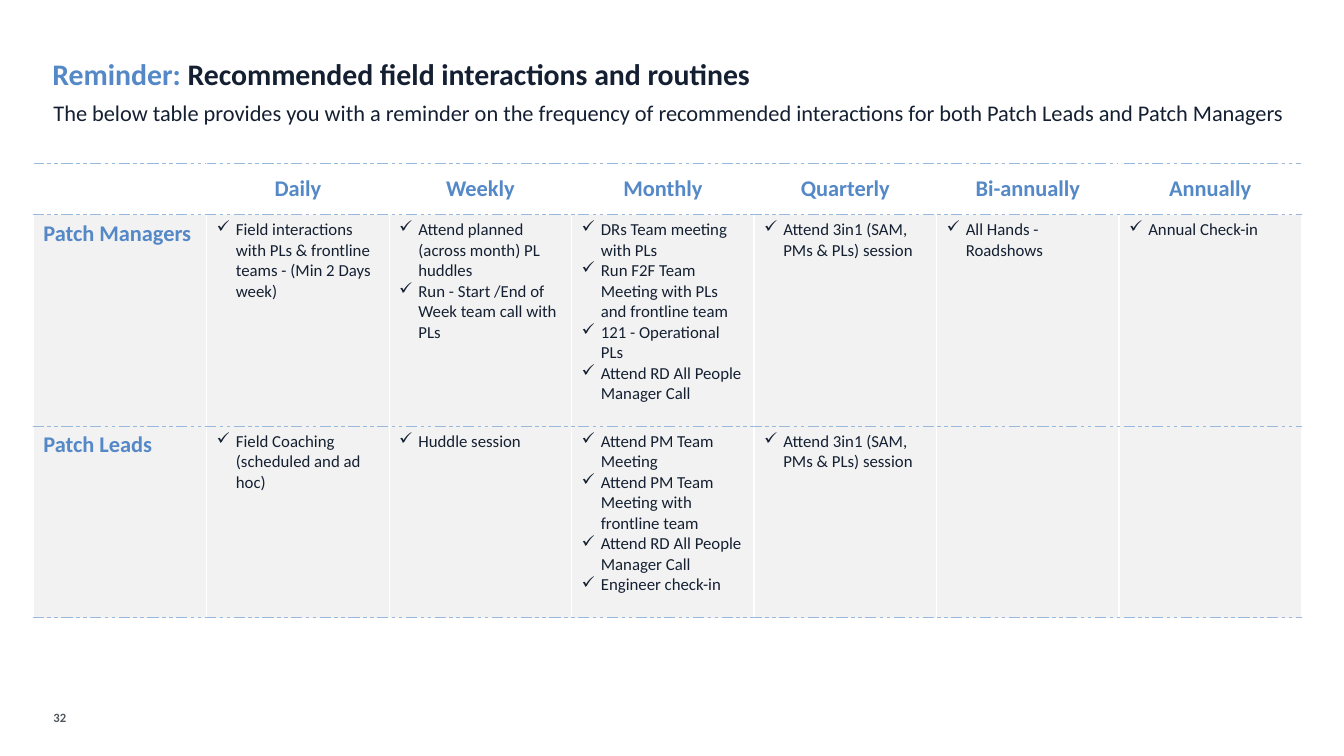
from lxml.etree import SubElement
from pptx import Presentation
from pptx.dml.color import RGBColor
from pptx.enum.text import MSO_ANCHOR as Anchor, PP_ALIGN as Align
from pptx.oxml import parse_xml
from pptx.oxml.ns import nsdecls, qn
from pptx.util import Inches, Pt

BLUE, NAVY, GREY = "5488C7", "142032", "51565D"
WHITE, PALE, RULE = "FFFFFF", "F2F2F2", "98B8DD"

HEADING = {"size": Pt(16), "bold": True, "color": BLUE}
ITEM = {"size": Pt(12), "bold": False, "color": NAVY}

FREQUENCIES = ["", "Daily", "Weekly", "Monthly", "Quarterly", "Bi-annually", "Annually"]
ROUTINES = {
    "Patch Managers": [
        ["Field interactions with PLs & frontline teams - (Min 2 Days week)"],
        ["Attend planned (across month) PL huddles",
         "Run - Start /End of Week team call with PLs"],
        ["DRs Team meeting with PLs",
         "Run F2F Team Meeting with PLs and frontline team",
         "121 - Operational PLs",
         "Attend RD All People Manager Call"],
        ["Attend 3in1 (SAM, PMs & PLs) session"],
        ["All Hands - Roadshows"],
        ["Annual Check-in"],
    ],
    "Patch Leads": [
        ["Field Coaching (scheduled and ad hoc)"],
        ["Huddle session"],
        ["Attend PM Team Meeting",
         "Attend PM Team Meeting with frontline team",
         "Attend RD All People Manager Call",
         "Engineer check-in"],
        ["Attend 3in1 (SAM, PMs & PLs) session"],
        [],
        [],
    ],
}


def rgb(value):
    return RGBColor.from_string(value)


def grid(units):
    """Ten grid columns or rows make one inch."""
    return Inches(units / 10)


class SlideBuilder:
    font = "Calibri"

    def __init__(self, presentation):
        self.slide = presentation.slides.add_slide(presentation.slide_layouts[6])

    def add_run(self, paragraph, text, style):
        run = paragraph.add_run()
        run.text = text
        run.font.name = self.font
        for name, value in style.items():
            if name == "color":
                run.font.color.rgb = rgb(value)
            else:
                setattr(run.font, name, value)

    def add_text(self, place, runs, wrap=True, spacing=0.9):
        shape = self.slide.shapes.add_textbox(*map(grid, place))
        frame = shape.text_frame
        frame.word_wrap = wrap
        for side in ("left", "top", "right", "bottom"):
            setattr(frame, f"margin_{side}", 0)
        paragraph = frame.paragraphs[0]
        paragraph.line_spacing = spacing
        for text, style in runs:
            self.add_run(paragraph, text, style)

    def add_table(self, left, top, columns, rows):
        shape = self.slide.shapes.add_table(
            len(rows), len(columns), grid(left), grid(top),
            grid(sum(columns)), grid(sum(rows)))
        table = shape.table
        for column, width in zip(table.columns, columns):
            column.width = grid(width)
        for row, height in zip(table.rows, rows):
            row.height = grid(height)
        return table

    def style_cell(self, cell, color):
        cell.fill.solid()
        cell.fill.fore_color.rgb = rgb(color)
        borders = [("lnL", WHITE, "solid"), ("lnR", WHITE, "solid"),
                   ("lnT", RULE, "sysDashDotDot"), ("lnB", RULE, "sysDashDotDot")]
        properties = cell._tc.get_or_add_tcPr()
        for position, (side, line, dash) in enumerate(borders):
            properties.insert(position, parse_xml(
                f'<a:{side} {nsdecls("a")} w="{Pt(1)}"><a:solidFill>'
                f'<a:srgbClr val="{line}"/></a:solidFill>'
                f'<a:prstDash val="{dash}"/></a:{side}>'))

    def fill_heading(self, cell, text, color, **layout):
        self.style_cell(cell, color)
        cell.vertical_anchor = layout.get("anchor", Anchor.TOP)
        paragraph = cell.text_frame.paragraphs[0]
        paragraph.alignment = layout.get("align", Align.LEFT)
        if text:
            self.add_run(paragraph, text, HEADING)

    def fill_checklist(self, cell, items):
        self.style_cell(cell, PALE)
        frame = cell.text_frame
        for index, item in enumerate(items):
            paragraph = frame.add_paragraph() if index else frame.paragraphs[0]
            properties = paragraph._p.get_or_add_pPr()
            properties.set("marL", str(Inches(0.19)))
            properties.set("indent", str(-Inches(0.19)))
            SubElement(properties, qn("a:buChar")).set("char", "✓")
            self.add_run(paragraph, item, ITEM)


def main():
    presentation = Presentation()
    presentation.slide_width, presentation.slide_height = Inches(13.33), Inches(7.5)
    builder = SlideBuilder(presentation)

    # Title and introduction
    title = {"size": Pt(21.3), "bold": True}
    builder.add_text((5.2, 5.9, 87.7, 4.2), [
        ("Reminder: ", {**title, "color": BLUE}),
        ("Recommended field interactions and routines", {**title, "color": NAVY})])
    builder.add_text((5.3, 10.1, 123.8, 4.2), [
        ("The below table provides you with a reminder on the frequency of "
         "recommended interactions for both Patch Leads and Patch Managers",
         {"size": Pt(16), "color": NAVY})])

    # Table of routines by role and frequency
    table = builder.add_table(3.3, 16.2, [17.2] + [18.1] * 6, [5.1, 21, 19])
    for column, frequency in enumerate(FREQUENCIES):
        builder.fill_heading(table.cell(0, column), frequency, WHITE,
                             anchor=Anchor.MIDDLE, align=Align.CENTER)
    for row, (role, checklists) in enumerate(ROUTINES.items(), start=1):
        builder.fill_heading(table.cell(row, 0), role, PALE)
        for column, items in enumerate(checklists, start=1):
            builder.fill_checklist(table.cell(row, column), items)

    # Page number
    builder.add_text((5.3, 70.4, 1.7, 1.5),
                     [("32", {"size": Pt(9), "bold": True, "color": GREY})],
                     wrap=False, spacing=1.0)

    presentation.save("out.pptx")


if __name__ == "__main__":
    main()
